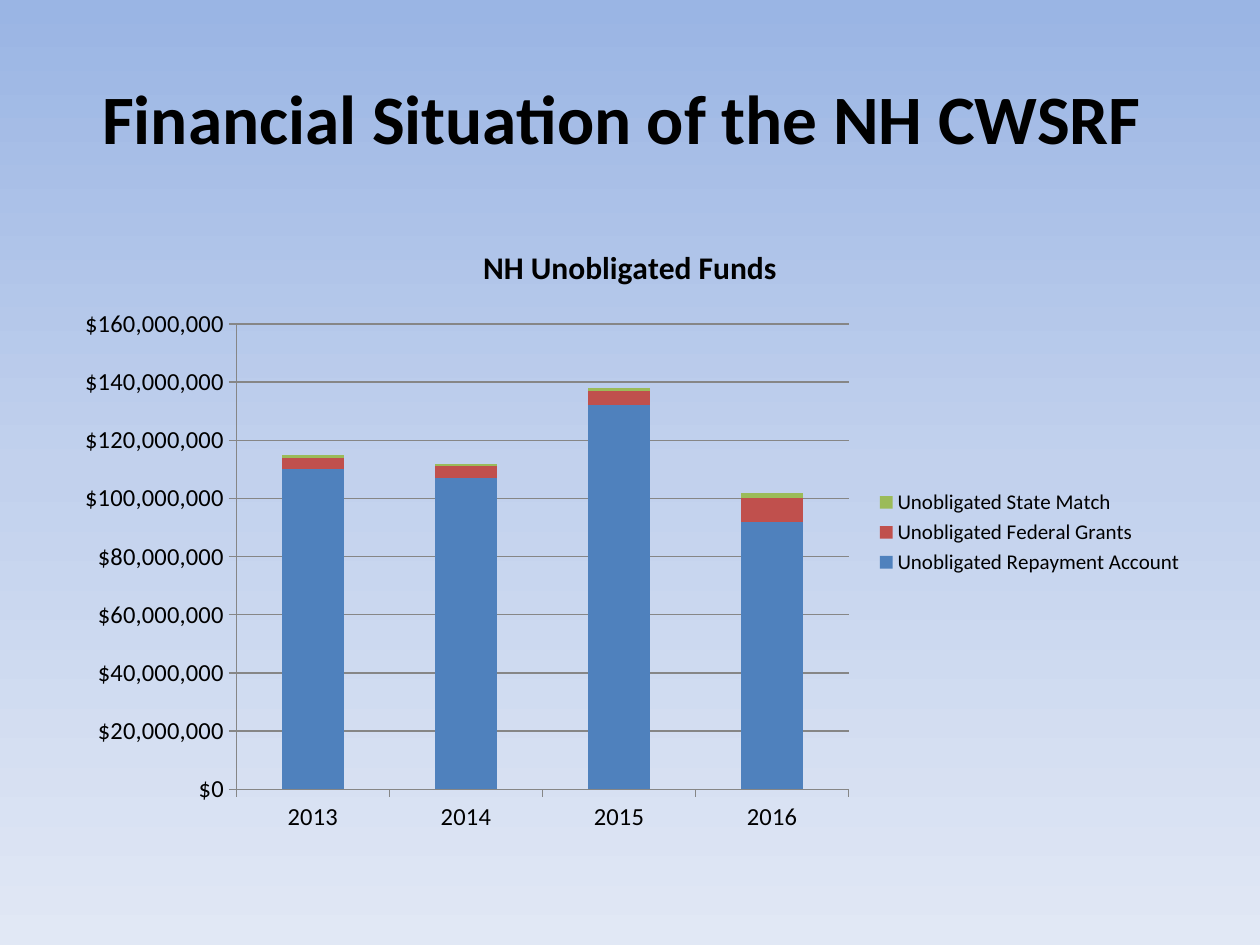
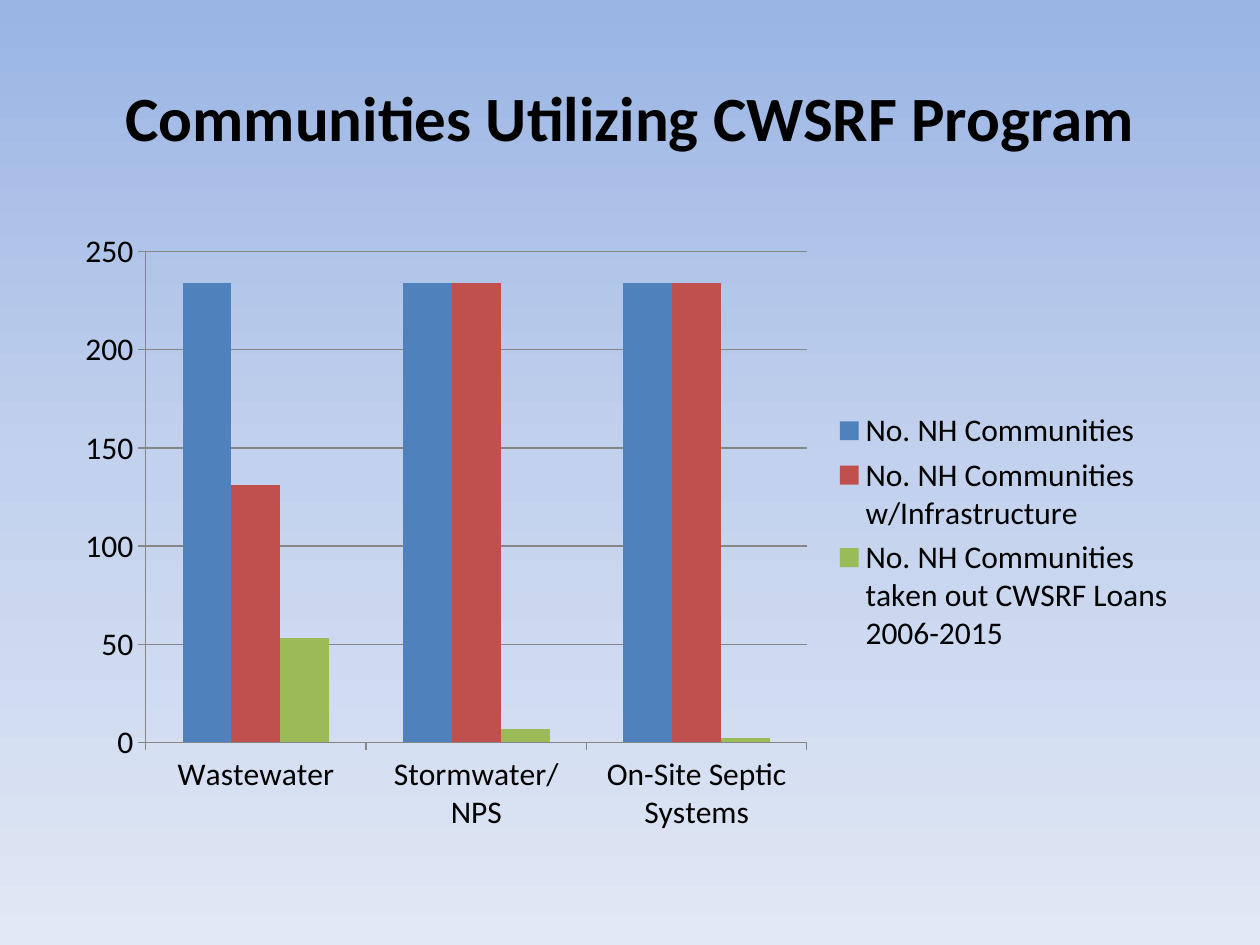
from copy import deepcopy

from lxml import etree
from pptx import Presentation
from pptx.chart.data import CategoryChartData as Data
from pptx.dml.color import RGBColor as RGB
from pptx.enum.chart import XL_CHART_TYPE as Kind, XL_LEGEND_POSITION as Side, XL_TICK_MARK as Tick
from pptx.enum.text import MSO_ANCHOR as Anchor, PP_ALIGN as Align
from pptx.oxml.ns import qn
from pptx.util import Inches, Pt

FONT = "Calibri"
BLACK = RGB(0, 0, 0)
GRAY = RGB(0x86, 0x86, 0x86)
BLUE = RGB(0x4F, 0x81, 0xBD)
RED = RGB(0xC0, 0x50, 0x4D)
GREEN = RGB(0x9B, 0xBB, 0x59)
SKY = [(0, RGB(0x9A, 0xB5, 0xE4)), (50, RGB(0xC2, 0xD1, 0xED)), (100, RGB(0xE1, 0xE8, 0xF5))]
LEFT, WIDTH = 0.5, 9
MILLION = 1_000_000

SLIDES = [
    {
        "title": "Financial Situation of the NH CWSRF ", "size": 39.6,
        "kind": Kind.COLUMN_STACKED, "overlap": 100,
        "head": "NH Unobligated Funds",
        "format": '"$"#,##0', "top": 160 * MILLION, "step": 20 * MILLION,
        "axis": 14, "legend": 12, "plot": (0.153, 0.166, 0.54, 0.746),
        "cats": ["2013", "2014", "2015", "2016"], "unit": MILLION,
        "series": [
            ("Unobligated Repayment Account", [110, 107, 132, 92]),
            ("Unobligated Federal Grants", [4, 4, 5, 8]),
            ("Unobligated State Match", [1, 1, 1, 2]),
        ],
    },
    {
        "title": "Communities Utilizing CWSRF Program", "size": 36,
        "kind": Kind.COLUMN_CLUSTERED, "overlap": 0,
        "head": None,
        "format": "General", "top": 250, "step": 50,
        "axis": 18, "legend": 18, "plot": (0.073, 0.05, 0.583, 0.787),
        "cats": ["Wastewater", "Stormwater/NPS", "On-Site Septic Systems"], "unit": 1,
        "series": [
            ("No. NH Communities", [234, 234, 234]),
            ("No. NH Communities w/Infrastructure", [131, 234, 234]),
            ("No. NH Communities taken out CWSRF Loans 2006-2015", [53, 7, 2]),
        ],
    },
]


def style(font, size, bold=False):
    font.name, font.size, font.bold = FONT, Pt(size), bold
    font.color.rgb = BLACK


def add_run(frame, text, size):
    run = frame.paragraphs[0].add_run()
    run.text = text
    style(run.font, size, True)


def paint_sky(slide):
    fill = slide.background.fill
    fill.gradient()
    fill.gradient_angle = 270
    stops = slide.element.find(".//" + qn("a:gsLst"))
    stops.insert(1, deepcopy(stops[0]))
    for stop, (place, color) in zip(fill.gradient_stops, SKY):
        stop.position = place / 100
        stop.color.rgb = color


def add_title(slide, text, size):
    box = slide.shapes.add_textbox(Inches(LEFT), Inches(0.3), Inches(WIDTH), Inches(1.25))
    frame = box.text_frame
    frame.word_wrap = True
    frame.vertical_anchor = Anchor.MIDDLE
    frame.paragraphs[0].alignment = Align.CENTER
    add_run(frame, text, size)


def place_plot(chart, bounds):
    area = chart.element.find(".//" + qn("c:plotArea"))
    for old in area.findall(qn("c:layout")):
        area.remove(old)
    layout = etree.Element(qn("c:layout"))
    area.insert(0, layout)
    manual = etree.SubElement(layout, qn("c:manualLayout"))
    parts = [("layoutTarget", "inner"), ("xMode", "edge"), ("yMode", "edge")]
    for tag, val in parts + list(zip("xywh", bounds)):
        etree.SubElement(manual, qn("c:" + tag)).set("val", str(val))


def draw_line(line):
    line.color.rgb = GRAY
    line.width = Pt(0.75)


def add_chart(slide, spec):
    data = Data(number_format=spec["format"])
    data.categories = spec["cats"]
    for name, vals in spec["series"]:
        data.add_series(name, [val * spec["unit"] for val in vals])
    chart = slide.shapes.add_chart(
        spec["kind"], Inches(LEFT), Inches(1.75), Inches(WIDTH), Inches(4.95), data).chart
    style(chart.font, spec["axis"])

    chart.has_title = bool(spec["head"])
    if spec["head"]:
        add_run(chart.chart_title.text_frame, spec["head"], 18)

    chart.has_legend = True
    chart.legend.position = Side.RIGHT
    chart.legend.include_in_layout = False
    style(chart.legend.font, spec["legend"])

    plot = chart.plots[0]
    plot.gap_width, plot.overlap = 150, spec["overlap"]
    plot.vary_by_categories = False
    for bar, color in zip(plot.series, (BLUE, RED, GREEN)):
        bar.format.fill.solid()
        bar.format.fill.fore_color.rgb = color

    for axis in (chart.category_axis, chart.value_axis):
        axis.major_tick_mark, axis.minor_tick_mark = Tick.OUTSIDE, Tick.NONE
        style(axis.tick_labels.font, spec["axis"])
        draw_line(axis.format.line)
    scale = chart.value_axis
    scale.minimum_scale, scale.maximum_scale = 0, spec["top"]
    scale.major_unit = spec["step"]
    scale.tick_labels.number_format = spec["format"]
    scale.tick_labels.number_format_is_linked = False
    draw_line(scale.major_gridlines.format.line)
    place_plot(chart, spec["plot"])


def main():
    deck = Presentation()
    deck.slide_width, deck.slide_height = Inches(10), Inches(7.5)
    for spec in SLIDES:
        slide = deck.slides.add_slide(deck.slide_layouts[6])
        paint_sky(slide)
        add_title(slide, spec["title"], spec["size"])
        add_chart(slide, spec)
    deck.save("out.pptx")


if __name__ == "__main__":
    main()
